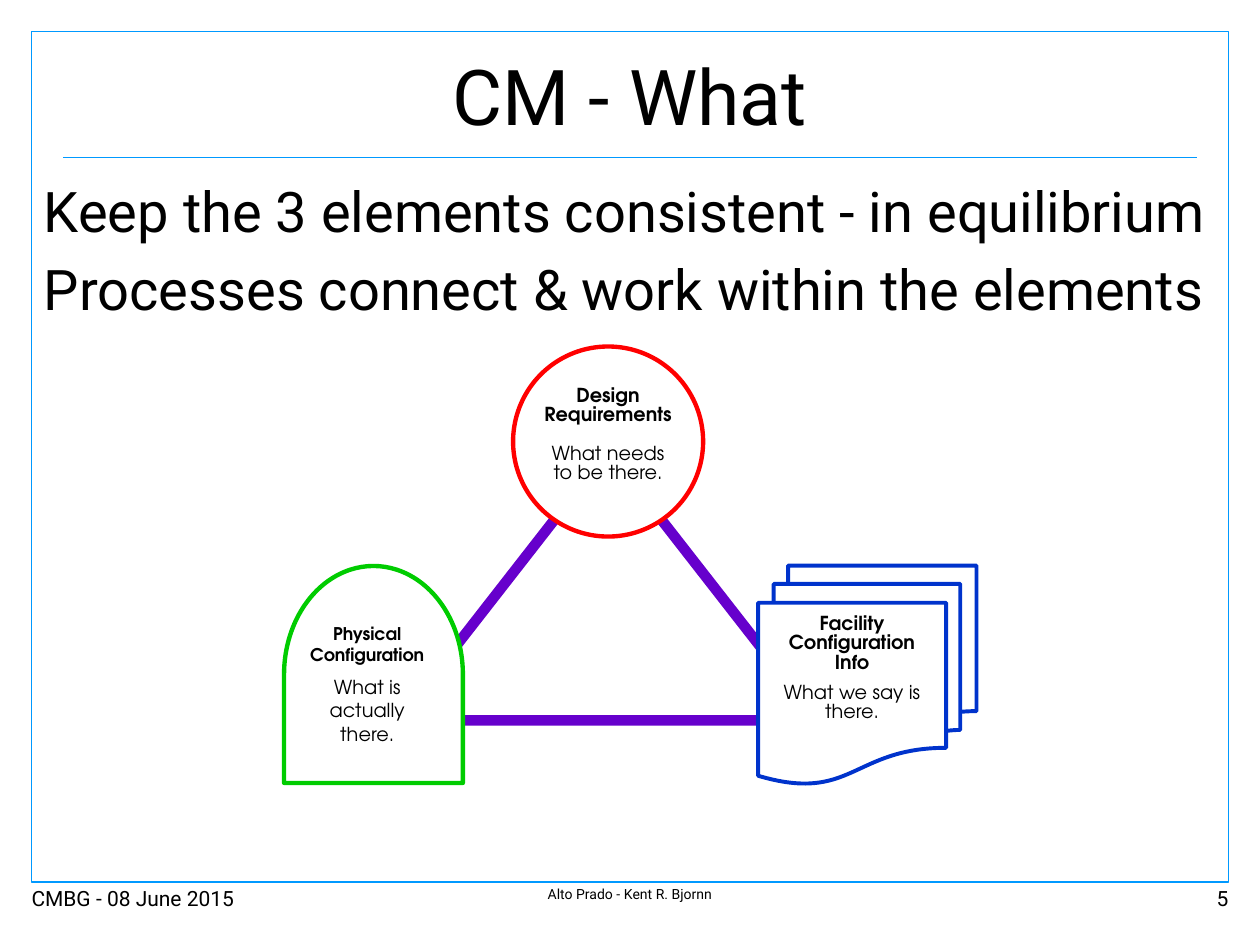
from dataclasses import dataclass

from lxml import etree
from pptx import Presentation
from pptx.dml.color import RGBColor
from pptx.enum.shapes import MSO_CONNECTOR, MSO_SHAPE
from pptx.enum.text import MSO_ANCHOR, PP_ALIGN
from pptx.oxml.ns import qn
from pptx.util import Pt

LEFT, CENTER, RIGHT = PP_ALIGN.LEFT, PP_ALIGN.CENTER, PP_ALIGN.RIGHT
TOP, MIDDLE = MSO_ANCHOR.TOP, MSO_ANCHOR.MIDDLE


@dataclass(frozen=True)
class Theme:
    text: str = "000000"
    paper: str = "FFFFFF"
    frame: str = "0099FF"
    link: str = "6600CC"
    design: str = "FF0000"
    facility: str = "0033CC"
    physical: str = "00CC00"
    font: str = "Roboto"
    label_font: str = "TeX Gyre Adventor"
    title_size: float = 44
    body_size: float = 32
    footer_size: float = 12
    credit_size: float = 8
    label_size: float = 11
    small_label_size: float = 10


THEME = Theme()
PAGE_WIDTH, PAGE_HEIGHT, MARGIN = 720, 540, 18
FRAME_WIDTH, FRAME_BOTTOM = PAGE_WIDTH - 2 * MARGIN, 504
FOOTER_TOP, FOOTER_HEIGHT = 506, 16
BOX_INSETS = (7.2, 3.6, 7.2, 3.6)

TITLE = "CM - What"
BODY = ["Keep the 3 elements consistent - in equilibrium",
        "Processes connect & work within the elements"]
FOOTERS = [  # text, alignment, width, size
    ("CMBG - 08 June 2015", LEFT, 162, THEME.footer_size),
    ("Alto Prado - Kent R. Bjornn", CENTER, 216, THEME.credit_size),
    ("5", RIGHT, 72, THEME.footer_size),
]
ELEMENTS = [
    dict(preset=MSO_SHAPE.OVAL, area=(293.2, 198, 108.6, 108.6),
         color=THEME.design, weight=2.5, insets=(0, 7.2, 0, 0),
         heading="Design\nRequirements", note="What needs to be there.",
         heading_size=THEME.label_size, gap=11, leading=11),
    dict(preset=MSO_SHAPE.FLOWCHART_MULTIDOCUMENT, area=(433.2, 323.2, 124.8, 124.8),
         color=THEME.facility, weight=2.25, insets=(0, 7.2, 0, 0),
         heading="Facility Configuration\nInfo", note="What we say is there.",
         heading_size=THEME.label_size, gap=6, leading=11),
    dict(preset=MSO_SHAPE.FLOWCHART_DELAY, area=(151.4, 334.3, 124, 102.2),
         color=THEME.physical, weight=2.5, insets=(7.2, 0, 14.4, 0),
         heading="Physical\nConfiguration", note="What is actually there.",
         heading_size=THEME.small_label_size, gap=6, rotation=270),
]


def points(values):
    return [Pt(value) for value in values]


def set_frame(frame, insets, anchor):
    frame.word_wrap = True
    frame.vertical_anchor = anchor
    (frame.margin_left, frame.margin_top,
     frame.margin_right, frame.margin_bottom) = points(insets)


def write(para, text, size, align, font=THEME.font, bold=False):
    para.text = text
    para.alignment = align
    para.font.name = font
    para.font.size = Pt(size)
    para.font.bold = bold
    para.font.color.rgb = RGBColor.from_string(THEME.text)


def add_text(page, area, lines, size, align=LEFT, insets=BOX_INSETS, anchor=TOP, before=0):
    frame = page.shapes.add_textbox(*points(area)).text_frame
    set_frame(frame, insets, anchor)
    for index, line in enumerate(lines):
        para = frame.add_paragraph() if index else frame.paragraphs[0]
        write(para, line, size, align)
        para.space_before = Pt(before)


def add_outline(page, preset, area, color, weight, fill=None):
    shape = page.shapes.add_shape(preset, *points(area))
    shape.shadow.inherit = False
    if fill:
        shape.fill.solid()
        shape.fill.fore_color.rgb = RGBColor.from_string(fill)
    else:
        shape.fill.background()
    shape.line.color.rgb = RGBColor.from_string(color)
    shape.line.width = Pt(weight)
    return shape


def add_rule(page, left, right, y):
    rule = page.shapes.add_connector(MSO_CONNECTOR.STRAIGHT, *points((left, y, right, y)))
    rule.line.color.rgb = RGBColor.from_string(THEME.frame)
    rule.line.width = Pt(0.75)
    etree.SubElement(rule.line._get_or_add_ln().getparent(), qn("a:effectLst"))


def add_element(page, preset, area, color, weight, insets, heading, note,
                heading_size, gap, leading=None, rotation=0):
    shape = add_outline(page, preset, area, color, weight, THEME.paper)
    frame = shape.text_frame
    set_frame(frame, insets, MIDDLE if rotation else TOP)
    frame.vertical_anchor = TOP
    if rotation:  # vertical text turns the words upright again
        shape.rotation = rotation
        frame._txBody.bodyPr.set("vert", "eaVert")
    first, second = frame.paragraphs[0], frame.add_paragraph()
    write(first, heading, heading_size, CENTER, THEME.label_font, bold=True)
    write(second, note, THEME.label_size, CENTER, THEME.label_font)
    first.space_after = Pt(gap)
    if leading:
        first.line_spacing = second.line_spacing = Pt(leading)


def main():
    deck = Presentation()
    deck.slide_width, deck.slide_height = points((PAGE_WIDTH, PAGE_HEIGHT))
    page = deck.slides.add_slide(deck.slide_layouts[6])

    add_outline(page, MSO_SHAPE.RECTANGLE,
                (MARGIN, MARGIN, FRAME_WIDTH, FRAME_BOTTOM - MARGIN), THEME.frame, 1)
    add_rule(page, 2 * MARGIN, PAGE_WIDTH - 2 * MARGIN, 90)
    add_text(page, (2 * MARGIN, MARGIN, PAGE_WIDTH - 4 * MARGIN, 72), [TITLE],
             THEME.title_size, CENTER, anchor=MIDDLE)
    add_text(page, (MARGIN, 97.2, FRAME_WIDTH, FRAME_BOTTOM - 97.2), BODY,
             THEME.body_size, before=0.2 * THEME.body_size)

    for text, align, width, size in FOOTERS:
        slack = {LEFT: 0, CENTER: 0.5, RIGHT: 1}[align]
        left = MARGIN + slack * (FRAME_WIDTH - width)
        add_text(page, (left, FOOTER_TOP, width, FOOTER_HEIGHT), [text], size, align,
                 insets=(0, 0, 0, 0))

    add_outline(page, MSO_SHAPE.ISOSCELES_TRIANGLE, (227.5, 257.8, 239.8, 153.8),
                THEME.link, 6)
    for element in ELEMENTS:
        add_element(page, **element)
    deck.save("out.pptx")


if __name__ == "__main__":
    main()
